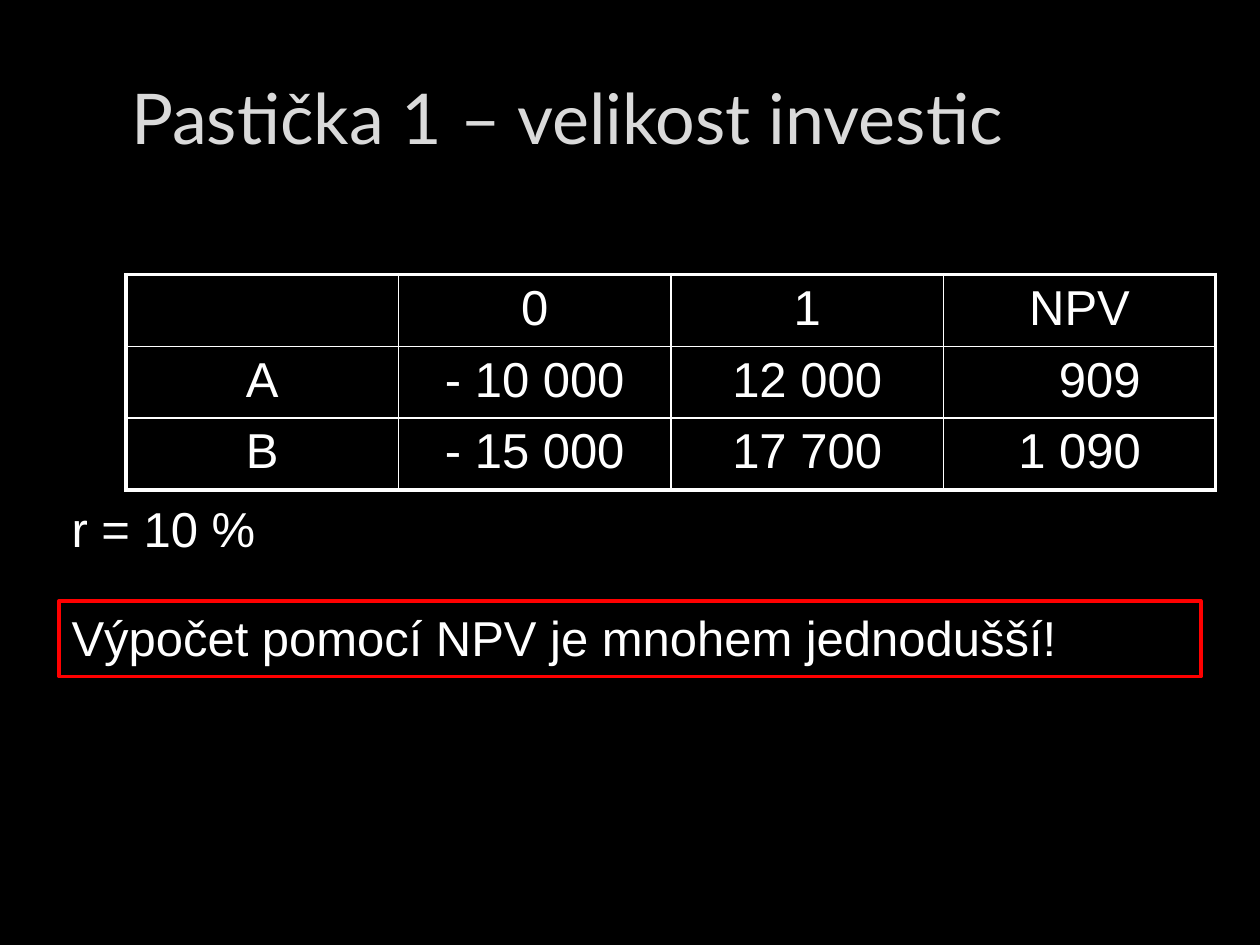
"""Build the slide on NPV and the size of investments."""
from dataclasses import dataclass

from lxml import etree
from pptx import Presentation
from pptx.dml.color import RGBColor
from pptx.enum.text import MSO_ANCHOR, PP_ALIGN
from pptx.oxml.ns import qn
from pptx.util import Inches, Pt

MIDDLE = MSO_ANCHOR.MIDDLE
CENTER = PP_ALIGN.CENTER
COLORS = {"back": "000000", "text": "FFFFFF", "title": "DADADA", "frame": "FF0000"}
THICK, THIN = 2.25, 1
ROWS = [
    ["", "0", "1", "NPV"],
    ["A", "- 10 000", "12 000", "909"],
    ["B", "- 15 000", "17 700", "1 090"],
]


@dataclass
class Note:
    text: str
    top: float
    width: float
    height: float
    framed: bool = False


NOTES = [
    Note("r = 10 %", 3.91, 2.44, 0.57),
    Note("Výpočet pomocí NPV je mnohem jednodušší!", 4.77, 9.06, 0.6, True),
]


def color(name: str) -> RGBColor:
    return RGBColor.from_string(COLORS[name])


def style(para, size: float = 28, face: str = "Arial", tint: str = "text") -> None:
    para.font.size = Pt(size)
    para.font.name = face
    para.font.color.rgb = color(tint)


def paint(fill, name: str) -> None:
    fill.solid()
    fill.fore_color.rgb = color(name)


def border(cell, side: str, width: float) -> None:
    props = cell._tc.get_or_add_tcPr()
    line = etree.SubElement(props, qn(f"a:ln{side}"), w=str(Pt(width)))
    fill = etree.SubElement(line, qn("a:solidFill"))
    etree.SubElement(fill, qn("a:srgbClr"), val=COLORS["text"])


def add_title(slide, text: str) -> None:
    title = slide.shapes.title
    title.left, title.top = Inches(0), Inches(0.3)
    title.width, title.height = Inches(9), Inches(1.25)
    frame = title.text_frame
    frame.text = text
    frame.vertical_anchor = MIDDLE
    para = frame.paragraphs[0]
    para.alignment = CENTER
    style(para, 40, "Lato", "title")


def add_grid(slide, rows: list[list[str]]) -> None:
    high, wide = len(rows), len(rows[0])
    table = slide.shapes.add_table(
        high, wide, Inches(1), Inches(2.18), Inches(8.65), Inches(1.71)
    ).table
    table.first_row = table.horz_banding = False
    for r, row in enumerate(rows):
        for c, text in enumerate(row):
            cell = table.cell(r, c)
            edges = {"L": c == 0, "R": c == wide - 1, "T": r == 0, "B": r == high - 1}
            for side, outer in edges.items():
                border(cell, side, THICK if outer else THIN)
            paint(cell.fill, "back")
            cell.text = text
            para = cell.text_frame.paragraphs[0]
            para.alignment = CENTER
            style(para)
    table.cell(1, wide - 1).margin_left = Inches(0.42)


def add_note(slide, note: Note) -> None:
    box = slide.shapes.add_textbox(
        Inches(0.47), Inches(note.top), Inches(note.width), Inches(note.height)
    )
    if note.framed:
        paint(box.fill, "back")
        box.line.color.rgb = color("frame")
        box.line.width = Pt(THICK)
    frame = box.text_frame
    frame.word_wrap = True
    frame.text = note.text
    style(frame.paragraphs[0])


def main() -> None:
    deck = Presentation()
    deck.slide_width, deck.slide_height = Inches(10), Inches(7.5)
    slide = deck.slides.add_slide(deck.slide_layouts[5])
    paint(slide.background.fill, "back")
    add_title(slide, "Pastička 1 – velikost investic")
    add_grid(slide, ROWS)
    for note in NOTES:
        add_note(slide, note)
    deck.save("out.pptx")


if __name__ == "__main__":
    main()
